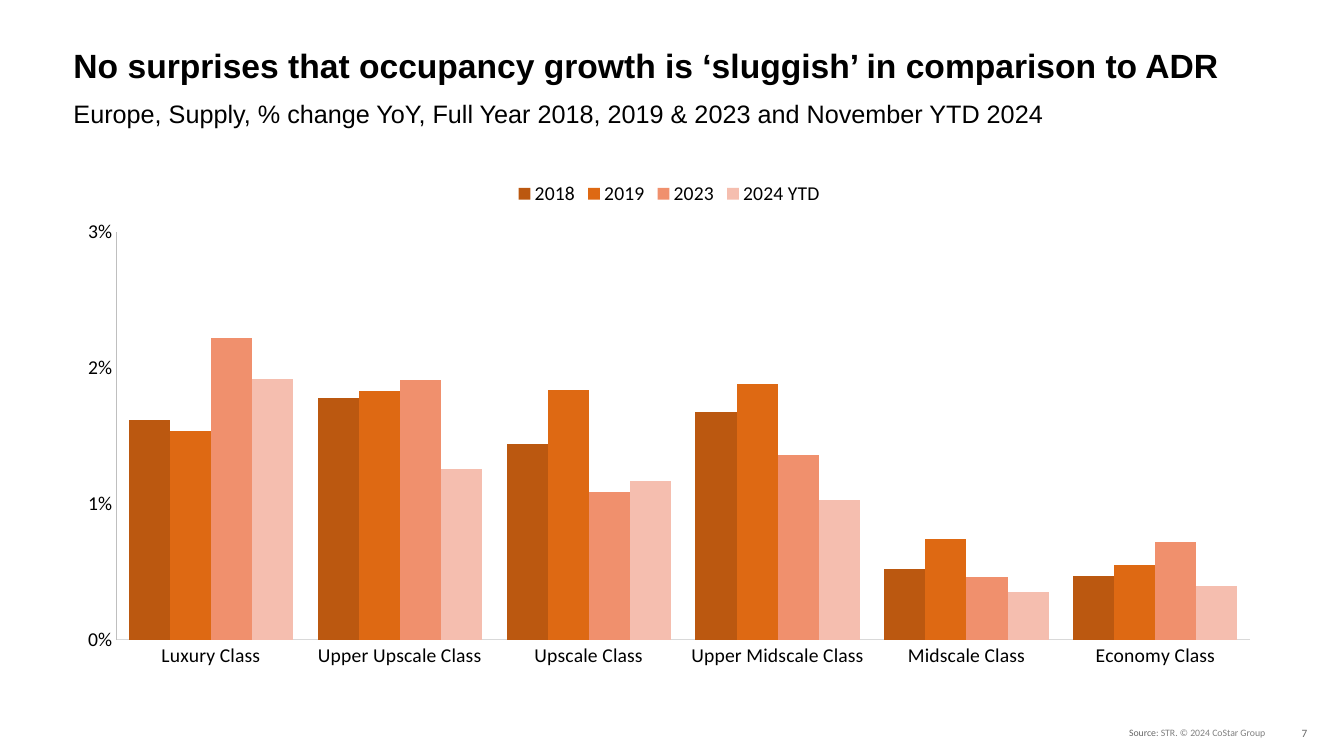
from dataclasses import dataclass

from lxml.etree import SubElement
from pptx import Presentation
from pptx.chart.data import CategoryChartData
from pptx.dml.color import RGBColor
from pptx.enum.chart import XL_CHART_TYPE, XL_LEGEND_POSITION, XL_TICK_MARK
from pptx.enum.text import MSO_ANCHOR
from pptx.oxml.ns import qn
from pptx.util import Inches, Pt


@dataclass(frozen=True)
class Theme:
    """Colours, fonts and type sizes of the slide."""
    ink: str = "000000"
    source_label: str = "666666"
    source_text: str = "808080"
    category_line: str = "D9D9D9"
    value_line: str = "BFBFBF"
    heading_font: str = "Arial"
    body_font: str = "Calibri"
    title_size: float = 24
    subtitle_size: float = 18
    heading_leading: float = 26.7
    chart_size: float = 14
    source_size: float = 7
    number_size: float = 8


@dataclass(frozen=True)
class Box:
    """A rectangle that hands out areas of itself in percent."""
    left: float
    top: float
    width: float
    height: float

    def area(self, left, top, width, height):
        """Return the sub-box at the given percentages."""
        return Box(self.left + self.width * left / 100,
                   self.top + self.height * top / 100,
                   self.width * width / 100, self.height * height / 100)

    def place(self):
        """Return the four lengths that python-pptx expects."""
        return [Inches(n) for n in (self.left, self.top, self.width, self.height)]


THEME = Theme()
PAGE = Box(0, 0, 13.33, 7.5)
CLASSES = ["Luxury Class", "Upper Upscale Class", "Upscale Class",
           "Upper Midscale Class", "Midscale Class", "Economy Class"]
SERIES = [
    ("2018", "BB5810", (0.0162, 0.0178, 0.0144, 0.0168, 0.0052, 0.0047)),
    ("2019", "DE6913", (0.0154, 0.0183, 0.0184, 0.0188, 0.0074, 0.0055)),
    ("2023", "F0906D", (0.0222, 0.0191, 0.0109, 0.0136, 0.0046, 0.0072)),
    ("2024 YTD", "F5BEAF", (0.0192, 0.0126, 0.0117, 0.0103, 0.0035, 0.004)),
]
PLOT_SHARES = {"x": 0.043, "y": 0.12, "w": 0.937, "h": 0.792}


def set_font(font, name, size, color, bold=False):
    """Apply face, size, colour and weight to a font."""
    font.name, font.size, font.bold = name, Pt(size), bold
    font.color.rgb = RGBColor.from_string(color)


def add_text(page, box, text, font, size, color, bold=False, anchor=MSO_ANCHOR.TOP):
    """Add a one-paragraph text box and return its paragraph."""
    frame = page.shapes.add_textbox(*box.place()).text_frame
    frame.word_wrap = True
    frame.vertical_anchor = anchor
    para = frame.paragraphs[0]
    para.add_run().text = text
    set_font(para.font, font, size, color, bold)
    return para


def add_heading(page, box):
    """Add the title and the subtitle below it."""
    title = add_text(page, box.area(0, 0, 100, 53),
                     "No surprises that occupancy growth is ‘sluggish’ in comparison to ADR",
                     THEME.heading_font, THEME.title_size, THEME.ink, True, MSO_ANCHOR.MIDDLE)
    subtitle = add_text(page, box.area(0, 53, 83.7, 47),
                        "Europe, Supply, % change YoY, Full Year 2018, 2019 & 2023 and November YTD 2024",
                        THEME.heading_font, THEME.subtitle_size, THEME.ink)
    for para in (title, subtitle):
        para.line_spacing = Pt(THEME.heading_leading)


def style_axis(axis, color):
    """Give an axis a thin line without ticks or gridlines."""
    axis.has_major_gridlines = False
    axis.major_tick_mark = axis.minor_tick_mark = XL_TICK_MARK.NONE
    axis.format.line.color.rgb = RGBColor.from_string(color)
    axis.format.line.width = Pt(0.75)
    set_font(axis.tick_labels.font, THEME.body_font, THEME.chart_size, THEME.ink)


def fix_plot_area(chart):
    """Pin the inner plot area to its shares of the chart frame."""
    plot_area = chart.plots[0]._element.getparent()
    layout = plot_area.find(qn("c:layout"))
    if layout is None:
        layout = SubElement(plot_area, qn("c:layout"))
        plot_area.insert(0, layout)
    manual = SubElement(layout, qn("c:manualLayout"))
    settings = {"layoutTarget": "inner", "xMode": "edge", "yMode": "edge", **PLOT_SHARES}
    for name, value in settings.items():
        SubElement(manual, qn(f"c:{name}")).set("val", str(value))


def add_growth_chart(page, box):
    """Add the clustered columns of supply change by hotel class."""
    data = CategoryChartData(number_format="0%")
    data.categories = CLASSES
    for name, _, values in SERIES:
        data.add_series(name, values)
    chart = page.shapes.add_chart(XL_CHART_TYPE.COLUMN_CLUSTERED, *box.place(), data).chart
    set_font(chart.font, THEME.body_font, THEME.chart_size, THEME.ink)
    chart.has_title = False
    chart.has_legend = True
    chart.legend.position = XL_LEGEND_POSITION.TOP
    chart.legend.include_in_layout = False
    set_font(chart.legend.font, THEME.body_font, THEME.chart_size, THEME.ink)

    plot = chart.plots[0]
    plot.gap_width, plot.overlap, plot.vary_by_categories = 60, 0, False
    for series, (_, color, _) in zip(plot.series, SERIES):
        series.format.fill.solid()
        series.format.fill.fore_color.rgb = RGBColor.from_string(color)

    style_axis(chart.category_axis, THEME.category_line)
    values = chart.value_axis
    style_axis(values, THEME.value_line)
    values.minimum_scale, values.maximum_scale, values.major_unit = 0, 0.03, 0.01
    values.tick_labels.number_format = "0%"
    values.tick_labels.number_format_is_linked = False
    fix_plot_area(chart)


def add_footer(page, box):
    """Add the source line and the page number."""
    source = add_text(page, box.area(0, 0, 76, 100), "Source",
                      THEME.body_font, THEME.source_size, THEME.source_label)
    span = source.add_run()
    span.text = ": STR. © 2024 CoStar Group"
    span.font.color.rgb = RGBColor.from_string(THEME.source_text)
    add_text(page, box.area(80, 4, 20, 92), "7", THEME.body_font,
             THEME.number_size, THEME.source_label, anchor=MSO_ANCHOR.MIDDLE)


def main():
    """Build the slide and save it."""
    deck = Presentation()
    deck.slide_width, deck.slide_height = PAGE.place()[2:]
    page = deck.slides.add_slide(deck.slide_layouts[6])
    add_heading(page, PAGE.area(4.73, 6.27, 95.27, 9.6))
    add_growth_chart(page, PAGE.area(4.8, 22.53, 90, 68.13))
    add_footer(page, PAGE.area(83.27, 95.47, 16.06, 2.93))
    deck.save("out.pptx")


if __name__ == "__main__":
    main()
